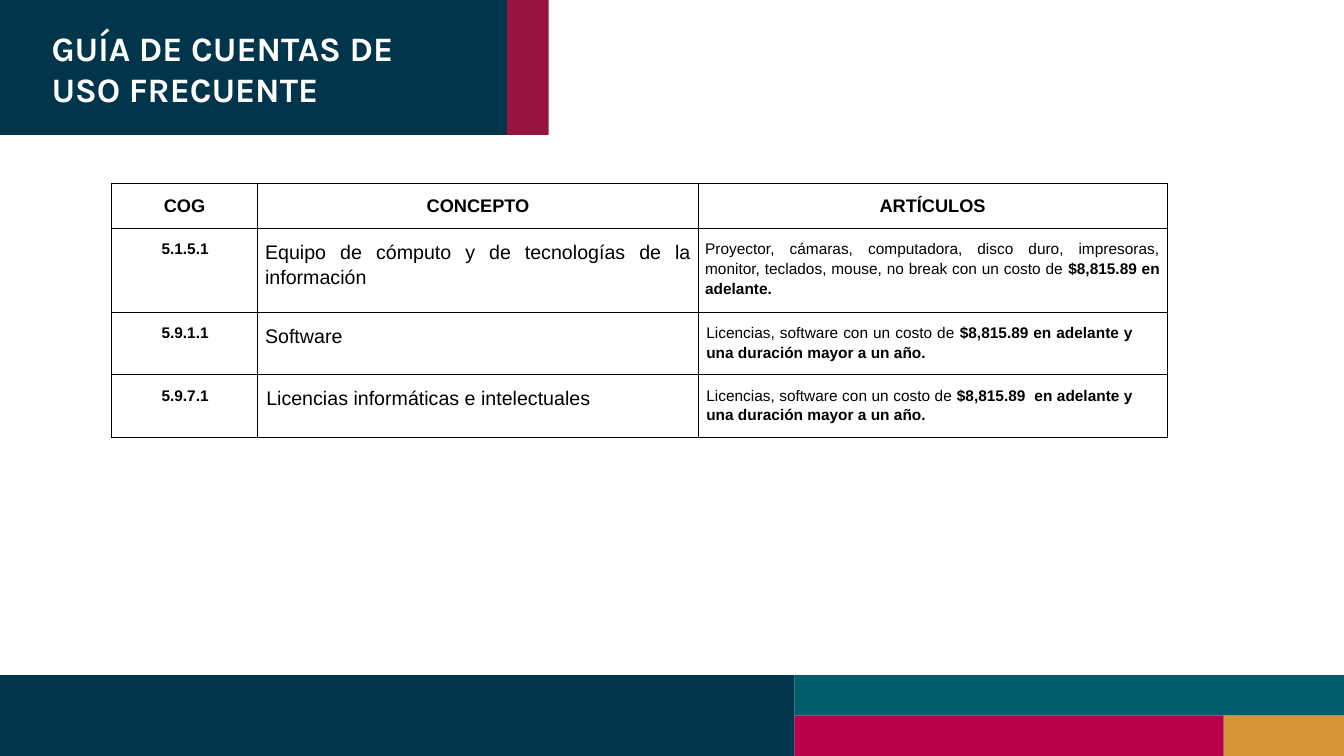
from dataclasses import dataclass

from lxml import etree
from pptx import Presentation
from pptx import util as u
from pptx.dml.color import RGBColor
from pptx.enum import shapes, text
from pptx.oxml import ns

NAVY, TEAL, CRIMSON, WINE, GOLD = "00354C", "005D6C", "B80048", "971340", "D69638"
BLACK, WHITE = "000000", "FFFFFF"
WIDTH, HEIGHT = 33.87, 19.05
HEADER_W, HEADER_H = 12.78, 3.4
FOOTER_SPLIT, GOLD_LEFT, BAR_H = 20.02, 30.84, 1.02
FOOTER_TOP = HEIGHT - 2 * BAR_H
CENTER, JUSTIFY = text.PP_ALIGN.CENTER, text.PP_ALIGN.JUSTIFY


@dataclass
class Block:
    left: float
    top: float
    width: float
    height: float
    color: str


@dataclass
class Account:
    code: str
    concept: str
    items: str
    cost: str
    concept_indent: float = 0
    items_indent: float = 0
    items_right: float = 0


BLOCKS = [
    Block(0, 0, HEADER_W, HEADER_H, NAVY),
    Block(GOLD_LEFT, HEIGHT - BAR_H, WIDTH - GOLD_LEFT, BAR_H, GOLD),
    Block(FOOTER_SPLIT, HEIGHT - BAR_H, GOLD_LEFT - FOOTER_SPLIT, BAR_H, CRIMSON),
    Block(FOOTER_SPLIT, FOOTER_TOP, WIDTH - FOOTER_SPLIT, BAR_H, TEAL),
    Block(HEADER_W, 0, 1.05, HEADER_H, WINE),
    Block(0, FOOTER_TOP, FOOTER_SPLIT, 2 * BAR_H, NAVY),
]
HEADINGS = ["COG", "CONCEPTO", "ARTÍCULOS"]
ACCOUNTS = [
    Account("5.1.5.1", "Equipo de cómputo y de tecnologías de la información",
            "Proyector, cámaras, computadora, disco duro, impresoras, monitor, "
            "teclados, mouse, no break con un costo de ", "$8,815.89 en adelante."),
    Account("5.9.1.1", "Software", "Licencias, software con un costo de ",
            "$8,815.89 en adelante y una duración mayor a un año.",
            items_indent=0.03, items_right=0.68),
    Account("5.9.7.1", "Licencias informáticas e intelectuales",
            "Licencias, software con un costo de ",
            "$8,815.89  en adelante y una duración mayor a un año.",
            concept_indent=0.03, items_indent=0.03, items_right=0.68),
]
COLUMN_WIDTHS = [3.7, 11.09, 11.82]
ROW_HEIGHTS = [1.13, 2.12, 1.57, 1.57]


def rgb(color: str) -> RGBColor:
    return RGBColor.from_string(color)


def add_run(p, words: str, *, size: float, bold: bool = False,
            font: str = "Arial", color: str = BLACK) -> None:
    r = p.add_run()
    r.text = words
    r.font.size, r.font.bold, r.font.name = u.Pt(size), bold, font
    r.font.color.rgb = rgb(color)


def add_block(s, block: Block) -> None:
    sp = s.shapes.add_shape(
        shapes.MSO_SHAPE.RECTANGLE, u.Cm(block.left), u.Cm(block.top),
        u.Cm(block.width), u.Cm(block.height))
    sp.shadow.inherit = False
    sp.fill.solid()
    sp.fill.fore_color.rgb = rgb(block.color)
    sp.line.fill.background()


def add_title(s) -> None:
    tf = s.shapes.add_textbox(u.Cm(1.3), u.Cm(0.69), u.Cm(9.93), u.Cm(2.08)).text_frame
    tf.word_wrap = True
    tf.margin_left = tf.margin_right = tf.margin_top = tf.margin_bottom = 0
    add_run(tf.paragraphs[0], "GUÍA DE CUENTAS DE USO FRECUENTE",
            size=24.5, bold=True, font="Karla", color=WHITE)


def set_borders(cell) -> None:
    tc_pr = cell._tc.get_or_add_tcPr()
    for index, side in enumerate(("lnL", "lnR", "lnT", "lnB")):
        ln = etree.Element(ns.qn(f"a:{side}"), w=str(u.Pt(0.75)))
        fill = etree.SubElement(ln, ns.qn("a:solidFill"))
        etree.SubElement(fill, ns.qn("a:srgbClr"), val=BLACK)
        tc_pr.insert(index, ln)


def format_cell(cell, align, indent: float = 0, right: float = 0):
    """Style an empty cell and return its paragraph."""
    cell.fill.background()
    set_borders(cell)
    cell.margin_left = cell.margin_right = u.Cm(0.18)
    cell.margin_top = cell.margin_bottom = u.Cm(0.25)
    p = cell.text_frame.paragraphs[0]
    p.alignment, p.line_spacing = align, 1.15
    p_pr = p._p.get_or_add_pPr()
    p_pr.set("marL", str(u.Cm(indent)))
    p_pr.set("marR", str(u.Cm(right)))
    p_pr.set("indent", "0")
    return p


def add_accounts_table(s) -> None:
    table = s.shapes.add_table(
        len(ROW_HEIGHTS), len(COLUMN_WIDTHS), u.Cm(2.8), u.Cm(4.62),
        u.Cm(sum(COLUMN_WIDTHS)), u.Cm(sum(ROW_HEIGHTS))).table
    table.first_row = table.horz_banding = False
    for column, width in zip(table.columns, COLUMN_WIDTHS):
        column.width = u.Cm(width)
    for row, height in zip(table.rows, ROW_HEIGHTS):
        row.height = u.Cm(height)
    for column, heading in enumerate(HEADINGS):
        add_run(format_cell(table.cell(0, column), CENTER), heading, size=13, bold=True)
    for row, account in enumerate(ACCOUNTS, start=1):
        code, concept, items = (table.cell(row, column) for column in range(3))
        add_run(format_cell(code, CENTER, 0.03), account.code, size=11, bold=True)
        add_run(format_cell(concept, JUSTIFY, account.concept_indent),
                account.concept, size=14)
        p = format_cell(items, JUSTIFY, account.items_indent, account.items_right)
        add_run(p, account.items, size=11)
        add_run(p, account.cost, size=11, bold=True)


def main() -> None:
    prs = Presentation()
    prs.slide_width, prs.slide_height = u.Cm(WIDTH), u.Cm(HEIGHT)
    s = prs.slides.add_slide(prs.slide_layouts[6])
    for block in BLOCKS:
        add_block(s, block)
    add_title(s)
    add_accounts_table(s)
    prs.save("out.pptx")


if __name__ == "__main__":
    main()
